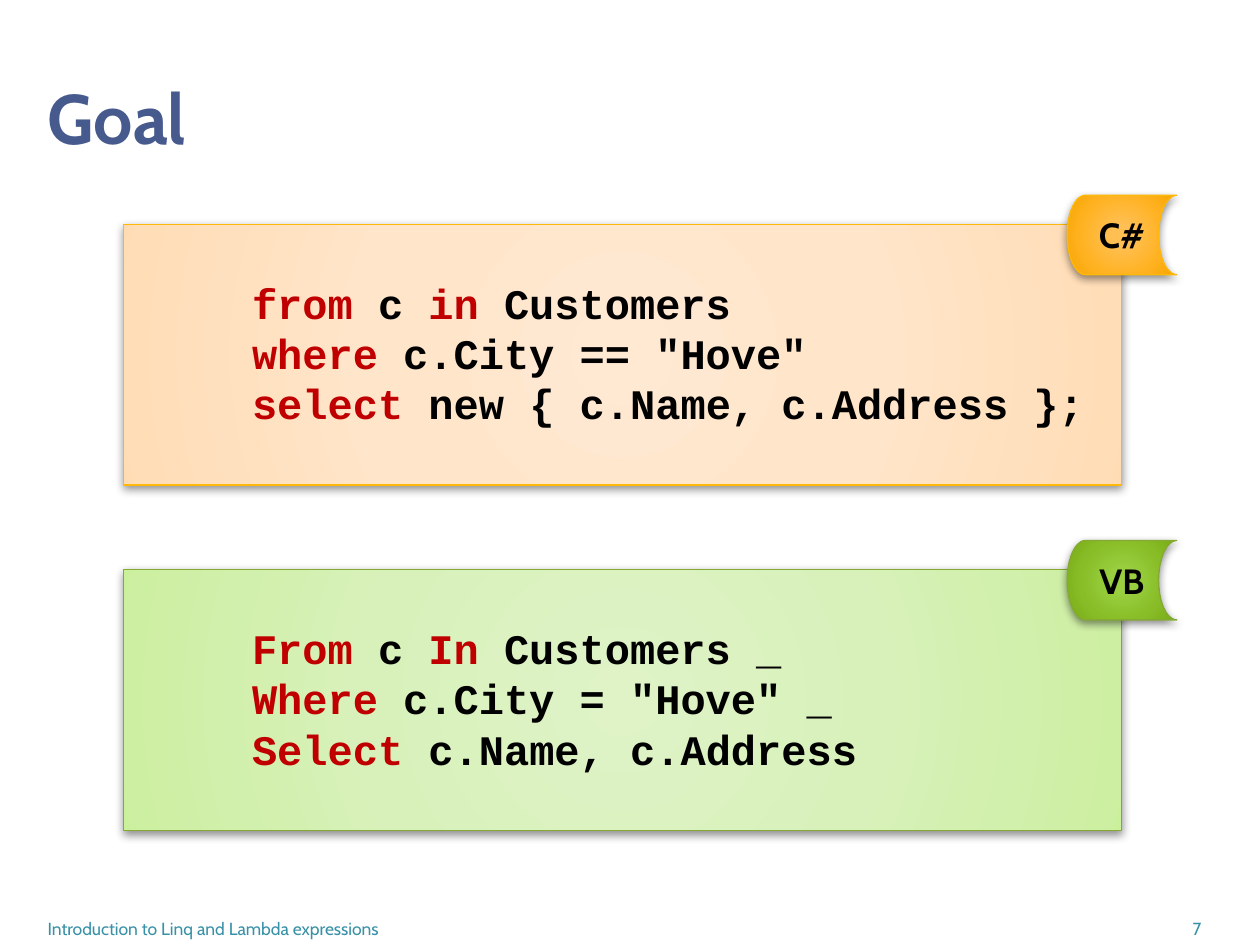
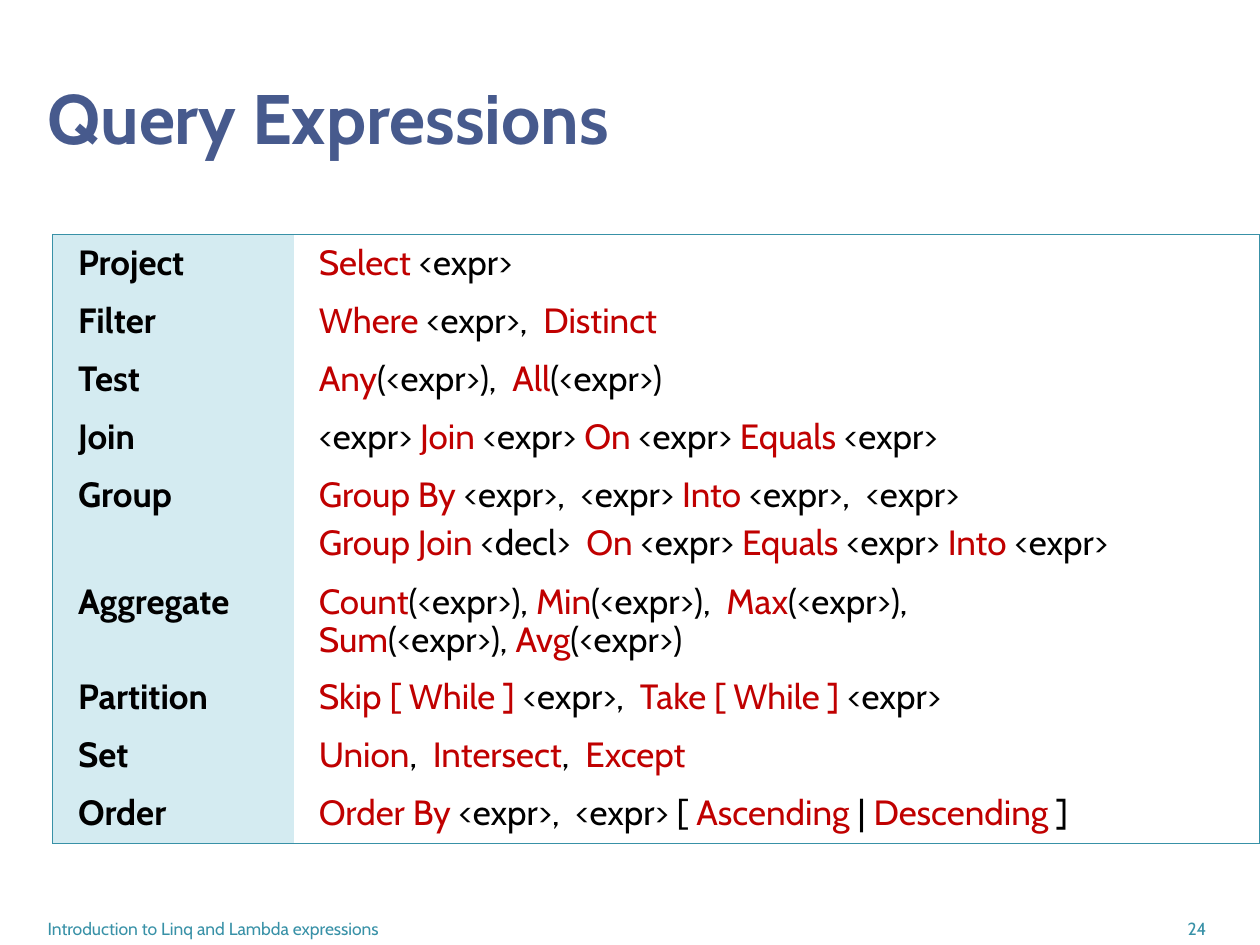
"""Builds two slides on query expressions."""
from dataclasses import dataclass

from lxml.etree import SubElement
from pptx import Presentation
from pptx.dml.color import RGBColor
from pptx.enum.shapes import MSO_SHAPE
from pptx.enum.text import MSO_ANCHOR, PP_ALIGN
from pptx.oxml import parse_xml
from pptx.oxml.ns import nsdecls, qn
from pptx.util import Inches, Pt


@dataclass(frozen=True)
class Theme:
    """Colours, fonts and type sizes of the deck."""
    title: str = "475A8D"
    accent: str = "3891A7"
    tint: str = "D4EBF1"
    ink: str = "000000"
    key: str = "C00000"
    sans: str = "Cabin"
    mono: str = "Courier New"
    head: int = 40
    code: int = 24
    body: int = 20
    small: int = 10
    rule: float = 0.75


@dataclass(frozen=True)
class Skin:
    """Line colour and gradient stops of a code panel and its badge."""
    edge: str
    panel: tuple
    badge: tuple


THEME = Theme()
ORANGE = Skin(
    "FEB80A",
    ((0, "FFE9D3"), (50, "FFE5C9"), (97, "FFDDB7"), (100, "FFDBB2")),
    ((0, "FFBF54"), (15, "FFBF53"), (62, "FFB221"), (97, "F6A500"), (100, "D69900")))
GREEN = Skin(
    "84AA33",
    ((0, "DFF3C7"), (50, "D8F1BA"), (97, "CDEFA2"), (100, "CAF199")),
    ((0, "9AD041"), (15, "9ACF41"), (62, "88BD27"), (97, "79AB17"), (100, "77AC08")))
FOOTER = "Introduction to Linq and Lambda expressions"
SHARP = """*from *c *in *Customers
*where *c.City == "Hove"
*select *new { c.Name, c.Address };"""
BASIC = """*From *c *In* Customers _
*Where *c.City = "Hove" _
*Select *c.Name, c.Address"""
CLAUSES = (
    ("Project", "*Select *<expr>"),
    ("Filter", "*Where* <expr>,  *Distinct*"),
    ("Test", "*Any*(<expr>),  *All*(<expr>)"),
    ("Join", "<expr> *Join* <expr> *On* <expr> *Equals* <expr>"),
    ("Group", "*Group By* <expr>,  <expr> *Into* <expr>,  <expr>\n"
              "*Group Join* <decl>  *On* <expr> *Equals* <expr> *Into* <expr>"),
    ("Aggregate", "*Count*(<expr>), *Min*(<expr>),  *Max*(<expr>),\v"
                  "*Sum*(<expr>), *Avg*(<expr>)"),
    ("Partition", "*Skip [ While ] *<expr>,  *Take [ While ] *<expr>"),
    ("Set", "*Union*,  *Intersect*,  *Except*"),
    ("Order", "*Order By* <expr>,  <expr> [ *Ascending* | *Descending* ]"),
)


def style(run, size, colour, bold=False, face=THEME.sans):
    """Set the font of one run."""
    font = run.font
    font.name, font.size, font.bold = face, Pt(size), bold
    font.color.rgb = RGBColor.from_string(colour)


def write(frame, text, size, bold=False, face=THEME.sans):
    """Fill a frame with lines whose starred parts are keywords."""
    for row, line in enumerate(text.split("\n")):
        para = frame.add_paragraph() if row else frame.paragraphs[0]
        para.alignment = PP_ALIGN.LEFT
        for spot, chunk in enumerate(line.split("*")):
            for turn, part in enumerate(chunk.split("\v")):
                if turn:
                    para.add_line_break()
                if part:
                    run = para.add_run()
                    run.text = part
                    style(run, size, THEME.key if spot % 2 else THEME.ink, bold, face)


def inset(item, left, top, right, bottom):
    """Set the four margins of a frame or cell."""
    item.margin_left, item.margin_top = Inches(left), Inches(top)
    item.margin_right, item.margin_bottom = Inches(right), Inches(bottom)


def label(slide, box, text, size, colour, anchor, align=PP_ALIGN.LEFT, bold=False):
    """Place one line of text in a box."""
    frame = slide.shapes.add_textbox(*map(Inches, box)).text_frame
    frame.word_wrap = True
    frame.vertical_anchor = anchor
    frame.text = text
    para = frame.paragraphs[0]
    para.alignment = align
    style(para.runs[0], size, colour, bold)


def glossy(slide, kind, box, edge, stops):
    """Add a shape with a round gradient, a thin line and a soft shadow."""
    shape = slide.shapes.add_shape(kind, *map(Inches, box))
    shape.fill.solid()
    shape.line.color.rgb = RGBColor.from_string(edge)
    shape.line.width = Pt(THEME.rule)
    shape.shadow.inherit = False
    props = shape.element.spPr
    marks = "".join(f'<a:gs pos="{at * 1000}"><a:srgbClr val="{tone}"/></a:gs>'
                    for at, tone in stops)
    props.replace(props.find(qn("a:solidFill")), parse_xml(
        f'<a:gradFill {nsdecls("a")} rotWithShape="1"><a:gsLst>{marks}</a:gsLst>'
        '<a:path path="circle"><a:fillToRect l="50000" t="50000" r="50000" b="50000"/>'
        '</a:path></a:gradFill>'))
    props.find(qn("a:effectLst")).append(parse_xml(
        f'<a:outerShdw {nsdecls("a")} blurRad="{Pt(5)}" dist="{Pt(2)}" dir="5400000" '
        f'rotWithShape="0"><a:srgbClr val="{THEME.ink}"><a:alpha val="43000"/>'
        '</a:srgbClr></a:outerShdw>'))
    return shape


def listing(slide, box, skin, name, code):
    """Draw a code panel with its language badge on the top right corner."""
    left, top, width, height = box
    panel = glossy(slide, MSO_SHAPE.RECTANGLE, box, skin.edge, skin.panel).text_frame
    panel.word_wrap = True
    panel.vertical_anchor = MSO_ANCHOR.TOP
    inset(panel, 1.02, 0.42, 0.02, 0.02)
    write(panel, code, THEME.code, True, THEME.mono)
    spot = (left + width - 0.43, top - 0.23, 0.87, 0.63)
    badge = glossy(slide, MSO_SHAPE.FLOWCHART_STORED_DATA, spot, skin.edge, skin.badge)
    frame = badge.text_frame
    frame.vertical_anchor = MSO_ANCHOR.MIDDLE
    inset(frame, 0, 0.05, 0, 0.05)
    frame.text = name
    frame.paragraphs[0].alignment = PP_ALIGN.CENTER
    style(frame.paragraphs[0].runs[0], THEME.body, THEME.ink, True)


def border(cell, sides):
    """Rule the named sides of a cell."""
    props = cell._tc.get_or_add_tcPr()
    for side in sides:
        line = SubElement(props, qn(f"a:ln{side}"), w=str(Pt(THEME.rule)))
        SubElement(SubElement(line, qn("a:solidFill")), qn("a:srgbClr"), val=THEME.accent)


def grid(slide, box, rows):
    """Draw the framed table of clauses with a tinted first column."""
    left, top, width, height = box
    holder = slide.shapes.add_table(len(rows), 2, *map(Inches, box))
    next(holder.element.iter(qn("a:tableStyleId"))).text = "{2D5ABB26-0587-4C30-8999-92F81FD0307C}"
    table = holder.table
    table.first_row = table.horz_banding = False
    table.columns[0].width = Inches(1.91)
    table.columns[1].width = Inches(width - 1.91)
    last = len(rows) - 1
    for row, texts in enumerate(rows):
        extra = 0.39 * texts[1].count("\n") + 0.3 * texts[1].count("\v")
        table.rows[row].height = Inches(0.46 + extra)
        for col, text in enumerate(texts):
            cell = table.cell(row, col)
            border(cell, "LR"[col] + "T" * (row == 0) + "B" * (row == last))
            if col:
                cell.fill.background()
            else:
                cell.fill.solid()
                cell.fill.fore_color.rgb = RGBColor.from_string(THEME.tint)
            inset(cell, 0.2, 0.08, 0.2, 0.08)
            write(cell.text_frame, text, THEME.body, bold=col == 0)
            for spot, para in enumerate(cell.text_frame.paragraphs):
                para.line_spacing = 0.9
                if spot:
                    para.space_before = Pt(6)


def page(deck, title, number):
    """Add a slide with the shared title and footer."""
    slide = deck.slides.add_slide(deck.slide_layouts[6])
    label(slide, (0.28, 0.3, 9.49, 1.25), title, THEME.head, THEME.title,
          MSO_ANCHOR.MIDDLE, bold=True)
    for box, text, align in (((0.28, 7.21, 6.93, 0.29), FOOTER, PP_ALIGN.LEFT),
                             ((9.25, 7.21, 0.5, 0.29), str(number), PP_ALIGN.CENTER)):
        label(slide, box, text, THEME.small, THEME.accent, MSO_ANCHOR.BOTTOM, align)
    return slide


def main():
    """Build and save the deck."""
    deck = Presentation()
    deck.slide_width, deck.slide_height = Inches(10), Inches(7.5)
    goal = page(deck, "Goal", 7)
    listing(goal, (0.98, 1.78, 7.92, 2.07), ORANGE, "C#", SHARP)
    listing(goal, (0.98, 4.52, 7.92, 2.07), GREEN, "VB", BASIC)
    query = page(deck, "Query Expressions", 24)
    grid(query, (0.42, 1.86, 9.58, 4.84), CLAUSES)
    deck.save("out.pptx")


if __name__ == "__main__":
    main()
